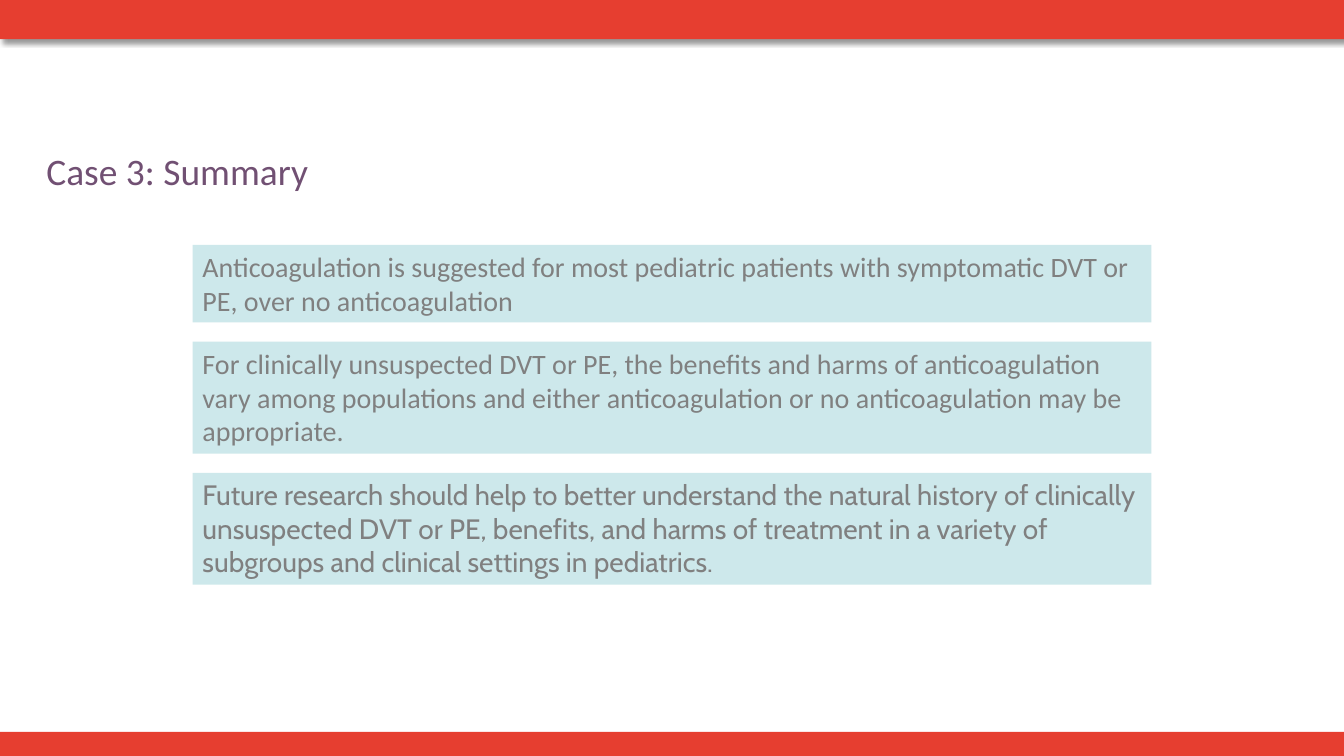
from lxml.etree import SubElement
from pptx import Presentation
from pptx.dml.color import RGBColor
from pptx.enum.shapes import MSO_SHAPE
from pptx.enum.text import MSO_ANCHOR, MSO_AUTO_SIZE, PP_ALIGN
from pptx.oxml.ns import qn
from pptx.util import Inches, Pt

SLIDE_WIDTH, SLIDE_HEIGHT = 13.33, 7.5
RED, PLUM, PALE_TEAL, GREY = "E63E30", "715073", "CDE8EB", "808080"

# Wording, font and box height of each statement
STATEMENTS = [
    ("Anticoagulation is suggested for most pediatric patients with symptomatic "
     "DVT or PE, over no anticoagulation", "Calibri", 0.77),
    ("For clinically unsuspected DVT or PE, the benefits and harms of "
     "anticoagulation vary among populations and either anticoagulation or no "
     "anticoagulation may be appropriate.", "Calibri", 1.11),
    ("Future research should help to better understand the natural history of "
     "clinically unsuspected DVT or PE, benefits, and harms of treatment in a "
     "variety of subgroups and clinical settings in pediatrics.", "Cabin", 1.11),
]


def color(hex_code):
    return RGBColor.from_string(hex_code)


def add_rectangle(slide, left, top, width, height, fill):
    rectangle = slide.shapes.add_shape(
        MSO_SHAPE.RECTANGLE, Inches(left), Inches(top), Inches(width), Inches(height))
    rectangle.shadow.inherit = False
    rectangle.fill.solid()
    rectangle.fill.fore_color.rgb = color(fill)
    rectangle.line.fill.background()
    return rectangle


def write(frame, wording, font, size, hex_code):
    """Write one left-aligned run at the top of a wrapping frame."""
    frame.word_wrap = True
    frame.vertical_anchor = MSO_ANCHOR.TOP
    paragraph = frame.paragraphs[0]
    paragraph.alignment = PP_ALIGN.LEFT
    run = paragraph.add_run()
    run.text = wording
    run.font.name = font
    run.font.size = Pt(size)
    run.font.color.rgb = color(hex_code)


def add_drop_shadow(shape, blur, distance, angle, opacity):
    """Give a shape a black outer shadow; lengths in points, opacity in percent."""
    effects = shape._element.spPr.find(qn("a:effectLst"))
    shadow = SubElement(effects, qn("a:outerShdw"), blurRad=str(Pt(blur)),
                        dist=str(Pt(distance)), dir=str(angle * 60000),
                        algn="tl", rotWithShape="0")
    black = SubElement(shadow, qn("a:srgbClr"), val="000000")
    SubElement(black, qn("a:alpha"), val=str(opacity * 1000))


def add_bands(slide):
    bottom_height = 0.24
    add_rectangle(slide, 0, SLIDE_HEIGHT - bottom_height,
                  SLIDE_WIDTH, bottom_height, RED)
    top_band = add_rectangle(slide, 0, -0.01, SLIDE_WIDTH, 0.4, RED)
    add_drop_shadow(top_band, blur=4, distance=3, angle=45, opacity=40)


def place_title(slide, left, top, width, height):
    title = slide.shapes.title
    title.left, title.top = Inches(left), Inches(top)
    title.width, title.height = Inches(width), Inches(height)
    frame = title.text_frame
    frame.margin_left = frame.margin_right = 0
    frame.margin_top = frame.margin_bottom = 0
    frame.auto_size = MSO_AUTO_SIZE.NONE
    write(frame, "Case 3: Summary", "Calibri", 26.7, PLUM)


def add_statements(slide, left, top, width, gap):
    """Stack the statement boxes downwards with an equal gap."""
    for wording, font, height in STATEMENTS:
        statement = add_rectangle(slide, left, top, width, height, PALE_TEAL)
        statement.text_frame.auto_size = MSO_AUTO_SIZE.SHAPE_TO_FIT_TEXT
        write(statement.text_frame, wording, font, 20, GREY)
        top += height + gap


def main():
    presentation = Presentation()
    presentation.slide_width = Inches(SLIDE_WIDTH)
    presentation.slide_height = Inches(SLIDE_HEIGHT)
    slide = presentation.slides.add_slide(presentation.slide_layouts[5])
    add_bands(slide)
    place_title(slide, 0.46, 1.47, 12, 0.78)
    add_statements(slide, 1.91, 2.43, 9.51, gap=0.19)
    presentation.save("out.pptx")


if __name__ == "__main__":
    main()
